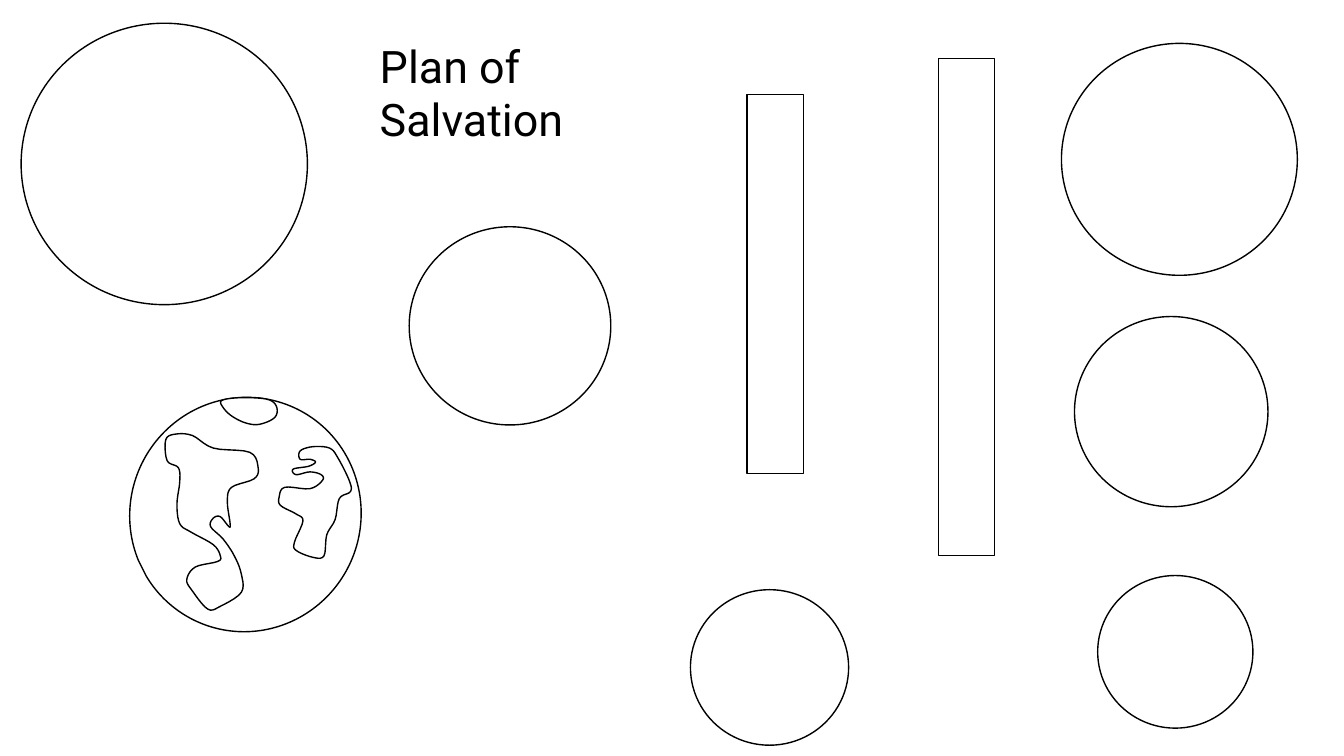
import pptx
import pptx.dml.color
import pptx.enum.shapes
import pptx.enum.text
import pptx.util

BLACK = "000000"
WHITE = "FFFFFF"
SHAPE = pptx.enum.shapes.MSO_SHAPE

# All lengths are in points. Every disc is slightly wider than tall.
DISC_RATIO = 0.983
BAR_WIDTH = 40.3

# Left, top, width
DISCS = {
    "top left": (15.1, 16.6, 204.5),
    "middle": (292.3, 162, 144),
    "bottom centre": (493.2, 421.2, 113),
    "upper right": (758.2, 31, 168.5),
    "middle right": (767.5, 226.1, 138.2),
    "lower right": (784.1, 411.1, 110.9),
}
# Left, top, height
BARS = {
    "short": (533.5, 67.7, 270.7),
    "tall": (670.3, 41.8, 355),
}
GLOBE_LEFT, GLOBE_TOP, GLOBE_WIDTH = 91.4, 285.1, 167.8

# Landmarks of each coast, measured from the globe's top left corner;
# a smooth curve is computed through them
COASTS = {
    "Arctic": [
        (67, 1), (68, 6), (74, 12), (84, 17), (94, 18),
        (105, 13), (106, 5), (99, 0), (80, -1),
    ],
    "Americas": [
        # West coast, going south
        (27, 29), (28, 44), (36, 49), (37, 59), (35, 75), (37, 89),
        (45, 95), (61, 104), (66, 112), (64, 116),
        # South America
        (48, 120), (42, 129), (46, 137), (57, 150), (66, 148),
        (81, 138), (81, 125), (76, 112), (68, 100),
        # Gulf and east coast, going north
        (59, 91), (61, 85), (66, 84), (72, 91), (73, 89), (71, 73),
        (74, 63), (90, 57), (93, 49), (87, 38), (61, 35), (46, 26), (34, 25),
    ],
    "Europe and Africa": [
        # Europe and its inlets
        (132, 34), (123, 37), (123, 43), (130, 43), (134, 45), (129, 48),
        (118, 50), (120, 54), (130, 52), (138, 54), (139, 58), (130, 64),
        # West coast of Africa, going south
        (112, 63), (108, 70), (109, 76), (120, 82), (125, 87),
        (119, 102), (120, 108), (132, 113), (140, 112),
        # East coast, going north
        (142, 97), (148, 86), (151, 71), (159, 66), (158, 58),
        (150, 42), (144, 35),
    ],
}
STEPS_PER_LANDMARK = 5


def color(hex_code):
    return pptx.dml.color.RGBColor.from_string(hex_code)


def style_outline(shape):
    shape.shadow.inherit = False
    shape.fill.solid()
    shape.fill.fore_color.rgb = color(WHITE)
    shape.line.color.rgb = color(BLACK)
    shape.line.width = pptx.util.Pt(1)


def add_outline(shapes, kind, left, top, width, height):
    bounds = map(pptx.util.Pt, (left, top, width, height))
    shape = shapes.add_shape(kind, *bounds)
    style_outline(shape)
    return shape


def add_disc(shapes, left, top, width, kind=SHAPE.OVAL):
    return add_outline(shapes, kind, left, top, width, width * DISC_RATIO)


def spline(before, start, end, after, t):
    """Catmull-Rom value between start and end, for t from 0 to 1."""
    slope_in = (end - before) / 2
    slope_out = (after - start) / 2
    rise = end - start
    bend = 3 * rise - 2 * slope_in - slope_out
    twist = slope_in + slope_out - 2 * rise
    return start + t * (slope_in + t * (bend + t * twist))


def smooth_loop(landmarks):
    """Points of a closed smooth curve through the landmarks."""
    count = len(landmarks)
    points = []
    for index in range(count):
        # The four landmarks around this stretch, wrapping at the ends
        around = [landmarks[(index + offset) % count] for offset in (-1, 0, 1, 2)]
        for step in range(STEPS_PER_LANDMARK):
            t = step / STEPS_PER_LANDMARK
            points.append(tuple(spline(*axis, t) for axis in zip(*around)))
    return points


def add_coast(shapes, landmarks):
    start, *others = [
        (pptx.util.Pt(GLOBE_LEFT + x), pptx.util.Pt(GLOBE_TOP + y))
        for x, y in smooth_loop(landmarks)
    ]
    builder = shapes.build_freeform(*start)
    builder.add_line_segments(others, close=True)
    style_outline(builder.convert_to_shape())


def add_earth(page):
    earth = page.shapes.add_group_shape().shapes
    globe = add_disc(earth, GLOBE_LEFT, GLOBE_TOP, GLOBE_WIDTH, SHAPE.CHORD)
    globe.adjustments[0] = 27
    globe.adjustments[1] = 21.55
    globe.rotation = 112.1
    for landmarks in COASTS.values():
        add_coast(earth, landmarks)


def add_title(page, text, left, top, width, height):
    bounds = map(pptx.util.Pt, (left, top, width, height))
    frame = page.shapes.add_textbox(*bounds).text_frame
    frame.word_wrap = True
    frame.auto_size = pptx.enum.text.MSO_AUTO_SIZE.SHAPE_TO_FIT_TEXT
    para = frame.paragraphs[0]
    para.text = text
    para.font.name = "Roboto"
    para.font.size = pptx.util.Pt(32)
    para.font.color.rgb = color(BLACK)


def main():
    deck = pptx.Presentation()
    deck.slide_width = pptx.util.Pt(960)
    deck.slide_height = pptx.util.Pt(540)
    page = deck.slides.add_slide(deck.slide_layouts[6])

    # Earth with its continents
    add_earth(page)

    # Empty discs and the bars between them
    for left, top, width in DISCS.values():
        add_disc(page.shapes, left, top, width)
    for left, top, height in BARS.values():
        add_outline(page.shapes, SHAPE.RECTANGLE, left, top, BAR_WIDTH, height)

    # Title
    add_title(page, "Plan of Salvation", 264.2, 23.8, 240.5, 46)

    deck.save("out.pptx")


if __name__ == "__main__":
    main()
